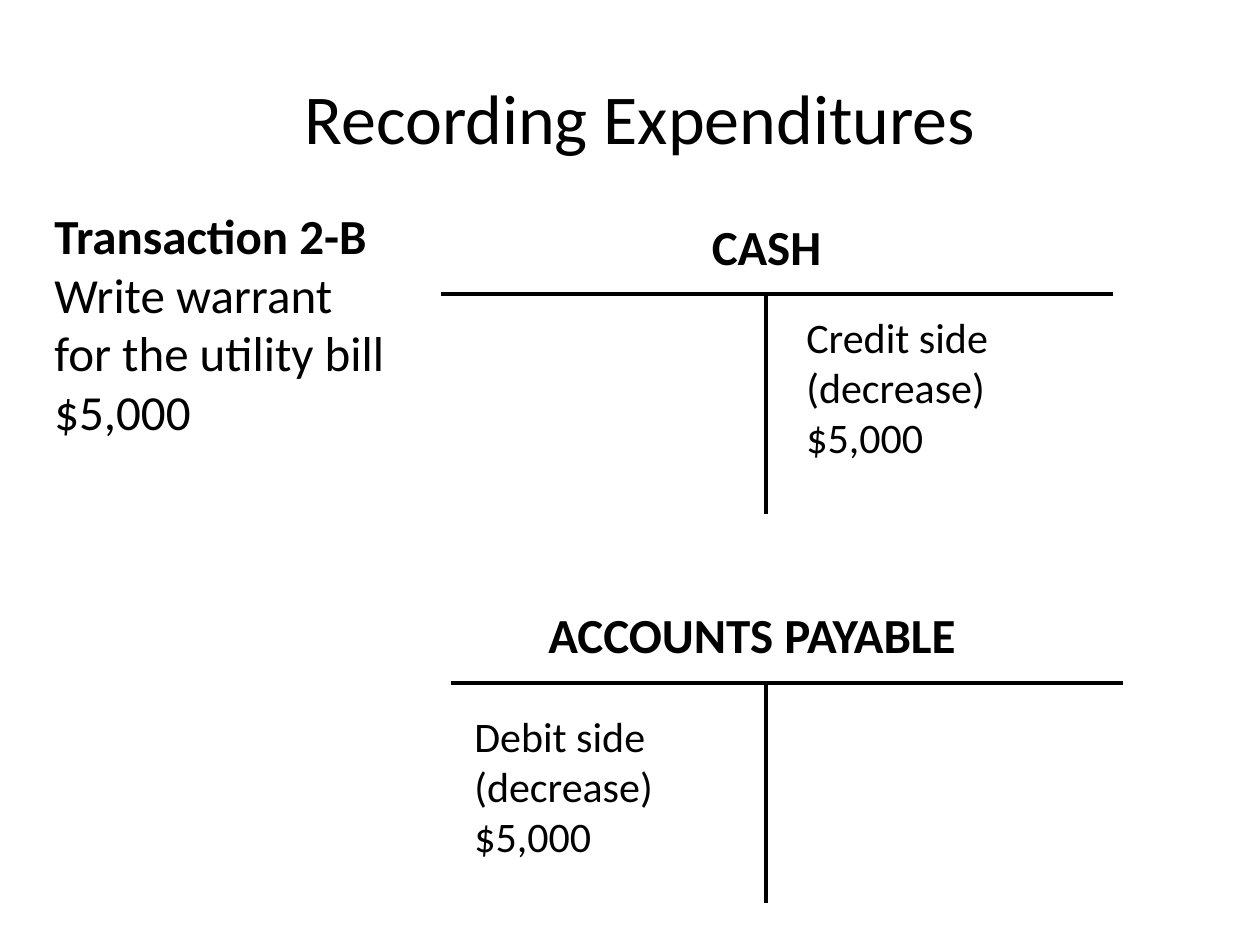
"""Build a slide showing the T-accounts for recording an expenditure."""
from lxml import etree
from pptx import Presentation
from pptx import util as u
from pptx.dml.color import RGBColor
from pptx.enum import shapes, text
from pptx.oxml.ns import qn

BLACK = RGBColor(0, 0, 0)
WHITE = RGBColor(255, 255, 255)
FONT = "Calibri"
SCALE = 914400 / 126
STEM_X, BAR_WIDTH, STEM_HEIGHT = 766, 672, 220

TITLE = "Recording Expenditures"
TRANSACTION = ["Transaction 2-B", "Write warrant for the utility bill $5,000"]
ACCOUNTS = [
    {"name": "CASH", "name_box": (651, 210, 231, 72), "align": text.PP_ALIGN.CENTER,
     "bar": (441, 294),
     "entry": ["Credit side", "(decrease)", "$5,000"], "entry_box": (794, 305, 289, 165)},
    {"name": "ACCOUNTS PAYABLE", "name_box": (536, 598, 504, 72), "align": text.PP_ALIGN.LEFT,
     "bar": (451, 683),
     "entry": ["Debit side", "(decrease)", "$5,000"], "entry_box": (462, 704, 289, 165)},
]


def px(length):
    return u.Emu(round(length * SCALE))


def write(holder, lines, *, box, size, bold_lines=0, align=text.PP_ALIGN.LEFT,
          anchor=text.MSO_ANCHOR.TOP):
    holder.left, holder.top, holder.width, holder.height = map(px, box)
    frame = holder.text_frame
    frame.word_wrap = True
    frame.vertical_anchor = anchor
    frame.text = "\n".join(lines)
    for index, paragraph in enumerate(frame.paragraphs):
        paragraph.alignment = align
        font = paragraph.runs[0].font
        font.name, font.size, font.bold = FONT, u.Pt(size), index < bold_lines
        font.color.rgb = BLACK


def add_text(slide, lines, **layout):
    write(slide.shapes.add_textbox(0, 0, 0, 0), lines, **layout)


def add_rule(slide, *ends):
    rule = slide.shapes.add_connector(shapes.MSO_CONNECTOR.STRAIGHT, *map(px, ends))
    rule.line.color.rgb = BLACK
    rule.line.width = u.Pt(2)
    etree.SubElement(rule._element.spPr, qn("a:effectLst"))


def add_account(slide, account):
    left, top = account["bar"]
    add_rule(slide, left, top, left + BAR_WIDTH, top)
    add_rule(slide, STEM_X, top, STEM_X, top + STEM_HEIGHT)
    add_text(slide, [account["name"]], box=account["name_box"], size=28,
             bold_lines=1, align=account["align"])
    add_text(slide, account["entry"], box=account["entry_box"], size=24)


def main():
    deck = Presentation()
    deck.slide_width, deck.slide_height = px(1260), px(945)
    slide = deck.slides.add_slide(deck.slide_layouts[5])
    slide.background.fill.solid()
    slide.background.fill.fore_color.rgb = WHITE
    write(slide.shapes.title, [TITLE], box=(73, 38, 1134, 158), size=40,
          align=text.PP_ALIGN.CENTER, anchor=text.MSO_ANCHOR.MIDDLE)
    for account in ACCOUNTS:
        add_account(slide, account)
    add_text(slide, TRANSACTION, box=(42, 199, 357, 251), size=28, bold_lines=1)
    deck.save("out.pptx")


if __name__ == "__main__":
    main()
